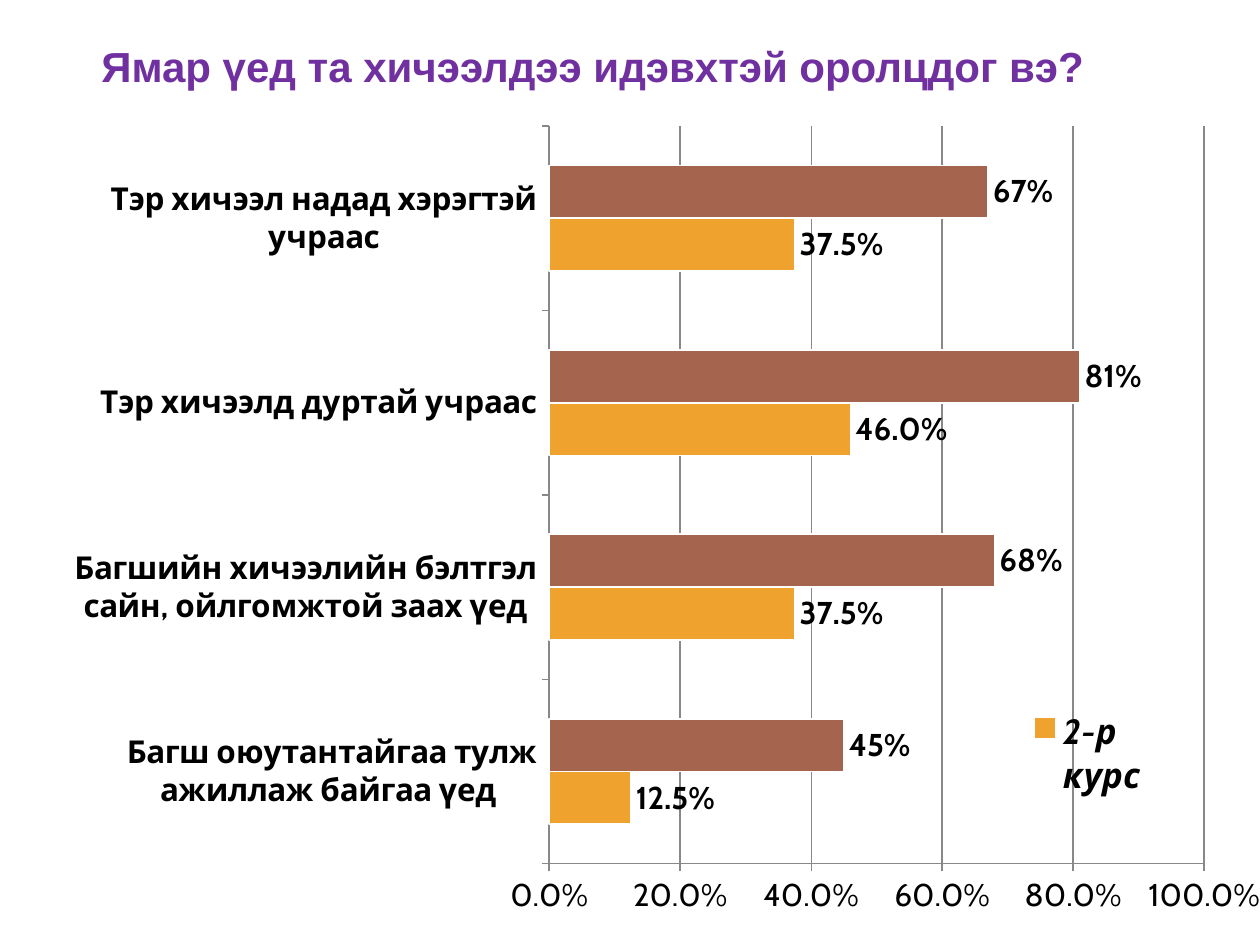
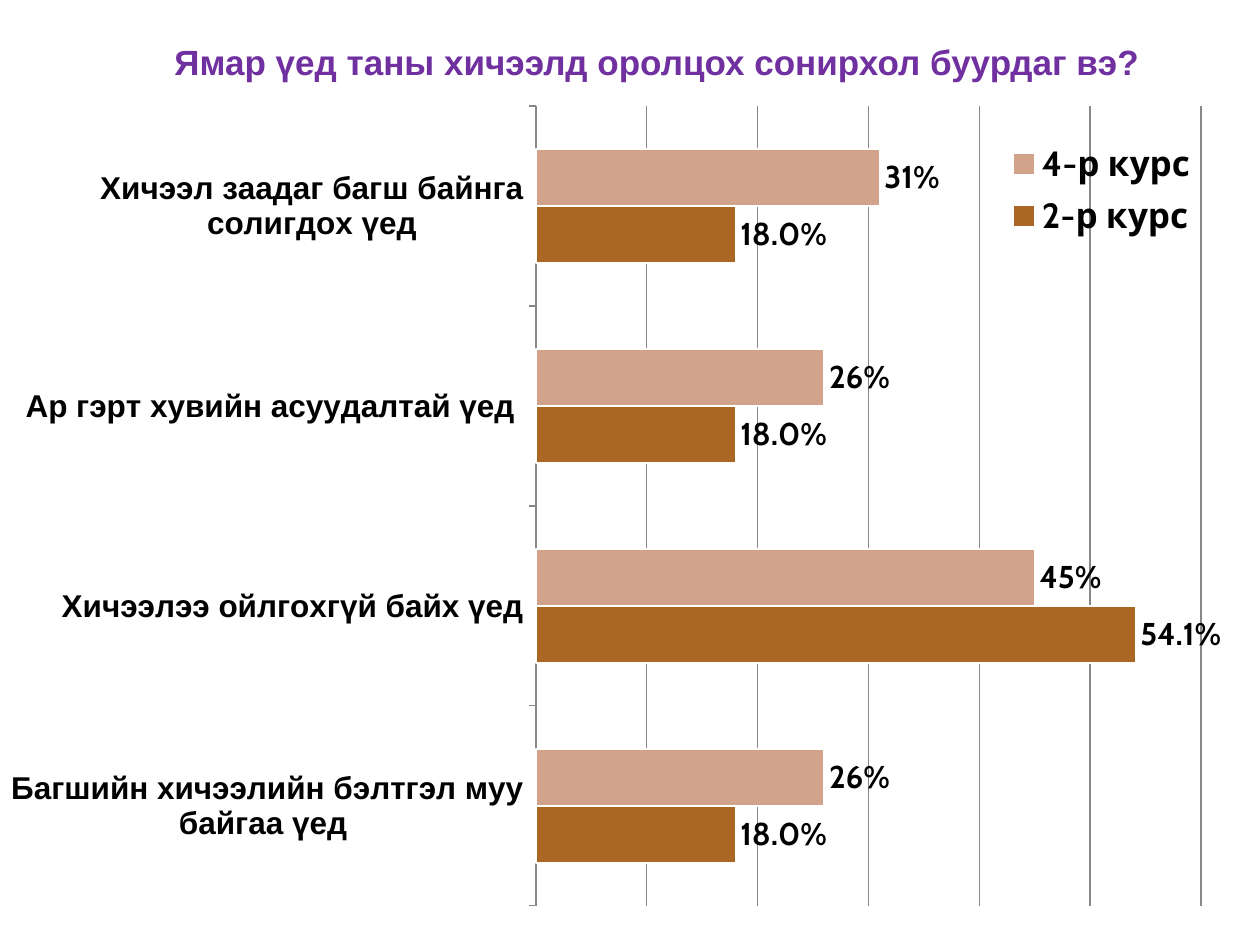
from lxml import etree
from pptx import Presentation
from pptx import util as u
from pptx.chart.data import CategoryChartData
from pptx.dml.color import RGBColor
from pptx.enum import chart as ch, text
from pptx.oxml import parse_xml
from pptx.oxml.ns import nsdecls, qn

PX = 914400 // 126
TITLE, BLACK, GRID, WHITE = "7030A0", "000000", "888888", "FFFFFF"


def color(fmt, value):
    fmt.rgb = RGBColor.from_string(value)


def place(element, index, box, frame, inner=False):
    for old in element.findall(qn("c:layout")):
        element.remove(old)
    x, y, w, h = box
    left, top, width, height = frame
    layout = parse_xml(f"<c:layout {nsdecls('c')}><c:manualLayout/></c:layout>")
    values = [("layoutTarget", "inner")] if inner else []
    values += [("xMode", "edge"), ("yMode", "edge"),
               ("x", round((x - left) / width, 4)), ("y", round((y - top) / height, 4)),
               ("w", round(w / width, 4)), ("h", round(h / height, 4))]
    for tag, value in values:
        etree.SubElement(layout[0], qn(f"c:{tag}")).set("val", str(value))
    element.insert(index, layout)


slides = [
    dict(title="Ямар үед та хичээлдээ идэвхтэй оролцдог вэ?", size=24,
         title_box=(53, 26, 1080, 80), frame=(32, 105, 1228, 840),
         plot=(550, 126, 656, 738), legend=(1024, 706, 130, 96), italic=True,
         only_fourth=True, cat_font="Cabin", top=1, step=0.2, show_values=True,
         cats=["Багш оюутантайгаа тулж ажиллаж байгаа үед ",
               "Багшийн хичээлийн бэлтгэл сайн, ойлгомжтой заах үед",
               "Тэр хичээлд дуртай учраас", "Тэр хичээл надад хэрэгтэй учраас"],
         second=(0.125, 0.375, 0.46, 0.375), fourth=(0.45, 0.68, 0.81, 0.67),
         fills=("F0A22E", "A5644E")),
    dict(title="Ямар үед таны хичээлд оролцох сонирхол буурдаг вэ?", size=20,
         title_box=(117, 32, 1080, 60), frame=(0, 105, 1260, 840),
         plot=(536, 106, 665, 800), legend=(1002, 134, 200, 112), italic=False,
         only_fourth=False, cat_font="Arial", top=0.6, step=0.1, show_values=False,
         cats=["Багшийн хичээлийн бэлтгэл муу байгаа үед ",
               "Хичээлээ ойлгохгүй байх үед", "Ар гэрт хувийн асуудалтай үед ",
               "Хичээл заадаг багш байнга солигдох үед"],
         second=(0.18, 0.541, 0.18, 0.18), fourth=(0.26, 0.45, 0.26, 0.31),
         fills=("AA6723", "D2A38B")),
]

prs = Presentation()
prs.slide_width, prs.slide_height = u.Inches(10), u.Inches(7.5)

for d in slides:
    s = prs.slides.add_slide(prs.slide_layouts[5])
    sp = s.shapes.title
    sp.left, sp.top, sp.width, sp.height = [v * PX for v in d["title_box"]]
    tf = sp.text_frame
    tf.word_wrap = False
    tf.vertical_anchor = text.MSO_ANCHOR.MIDDLE
    p = tf.paragraphs[0]
    p.alignment = text.PP_ALIGN.CENTER
    r = p.add_run()
    r.text = d["title"]
    r.font.name, r.font.size, r.font.bold = "Arial", u.Pt(d["size"]), True
    color(r.font.color, TITLE)

    data = CategoryChartData()
    data.categories = d["cats"]
    data.add_series("2-р курс", d["second"], "0.0%")
    data.add_series("4-р курс", d["fourth"], "0%")
    chart = s.shapes.add_chart(ch.XL_CHART_TYPE.BAR_CLUSTERED,
                               *[v * PX for v in d["frame"]], data).chart
    chart.has_title = False
    chart.font.name, chart.font.size = "Cabin", u.Pt(18)
    color(chart.font.color, BLACK)

    plot = chart.plots[0]
    plot.vary_by_categories = False
    plot.gap_width, plot.overlap = 150, 0
    for series, fill, fmt in zip(plot.series, d["fills"], ("0.0%", "0%")):
        series.format.fill.solid()
        color(series.format.fill.fore_color, fill)
        color(series.format.line.color, WHITE)
        series.format.line.width = u.Pt(1)
        labels = series.data_labels
        labels.show_value = True
        labels.number_format, labels.number_format_is_linked = fmt, False
        labels.position = ch.XL_LABEL_POSITION.OUTSIDE_END
        labels.font.name, labels.font.size, labels.font.bold = "Cabin", u.Pt(18), True
        color(labels.font.color, BLACK)

    cat, val = chart.category_axis, chart.value_axis
    val.minimum_scale, val.maximum_scale, val.major_unit = 0, d["top"], d["step"]
    val.has_major_gridlines = True
    val.tick_labels.number_format = "0.0%"
    val.tick_labels.number_format_is_linked = False
    val.visible = d["show_values"]
    cat.tick_labels.font.name = d["cat_font"]
    cat.tick_labels.font.size, cat.tick_labels.font.bold = u.Pt(18), True
    for axis in (cat, val):
        axis.major_tick_mark = ch.XL_TICK_MARK.OUTSIDE
    for line in (cat.format.line, val.format.line, val.major_gridlines.format.line):
        color(line.color, GRID)
        line.width = u.Pt(0.75)

    chart.has_legend = True
    legend = chart.legend
    legend.position = ch.XL_LEGEND_POSITION.RIGHT
    legend.include_in_layout = False
    font = legend.font
    font.name, font.size, font.bold, font.italic = "Cabin", u.Pt(20), True, d["italic"]
    color(font.color, BLACK)
    place(legend._element, 1, d["legend"], d["frame"])
    if d["only_fourth"]:
        legend._element.insert(1, parse_xml(
            f'<c:legendEntry {nsdecls("c")}><c:idx val="0"/><c:delete val="1"/></c:legendEntry>'))
    place(plot._element.getparent(), 0, d["plot"], d["frame"], inner=True)

prs.save("out.pptx")
